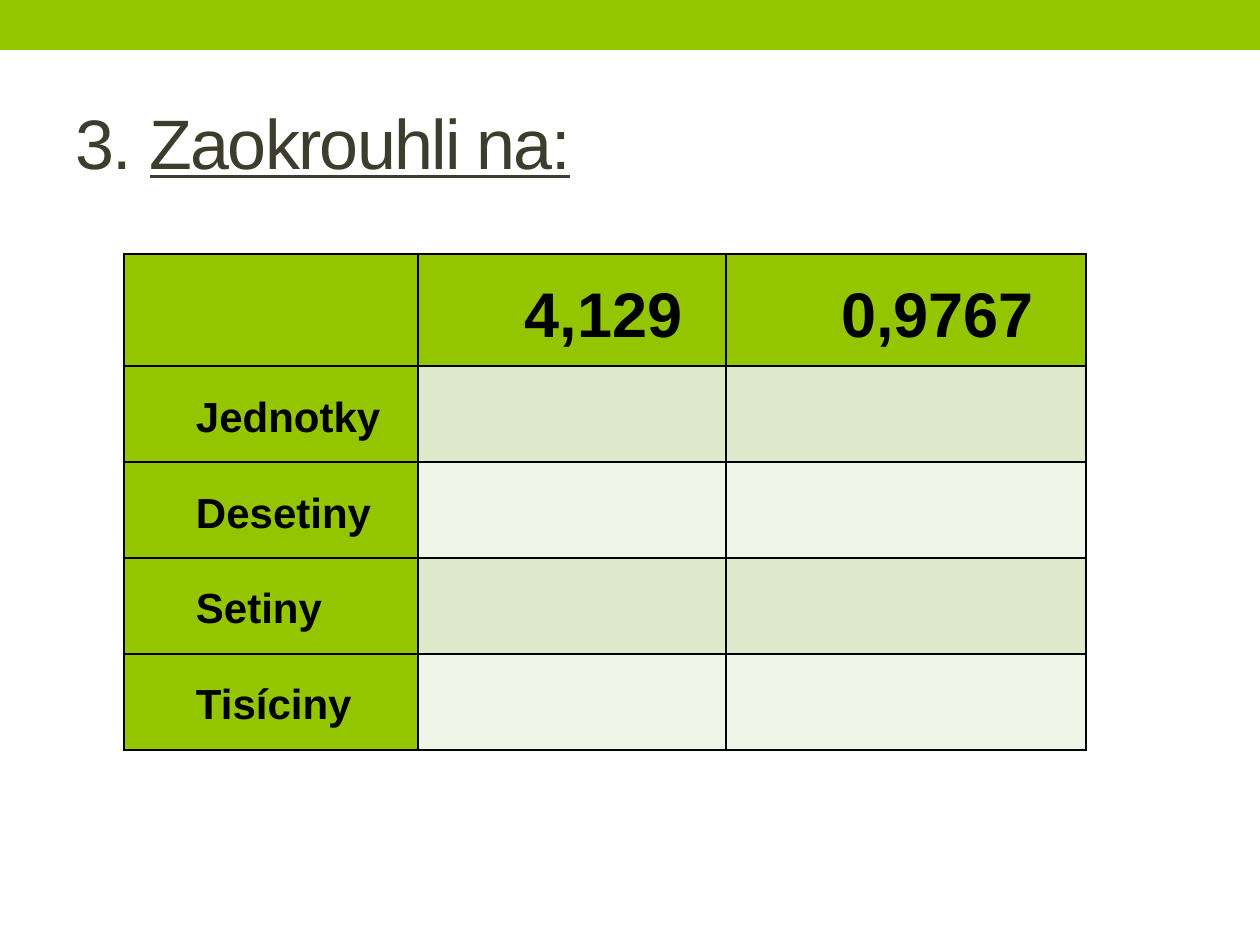
import pptx
import pptx.util
import pptx.dml.color
import pptx.enum.shapes
import pptx.enum.text
import pptx.oxml
from dataclasses import dataclass
from lxml import etree

PX = 914400 // 126  # EMU in one px
MID = pptx.enum.text.MSO_ANCHOR.MIDDLE
LEFT = pptx.enum.text.PP_ALIGN.LEFT
MAIN = "http://schemas.openxmlformats.org/drawingml/2006/main"


@dataclass
class Theme:
    font: str = "Arial"
    green: str = "94C600"
    bands: tuple = ("DCEACC", "EEF5E7")
    ink: str = "000000"
    dark: str = "3E3D2D"
    title: int = 40
    head: int = 36
    label: int = 24


def rgb(code):
    return pptx.dml.color.RGBColor.from_string(code)


def add_text(para, text, size, color, font, bold=False, line=False, track=0):
    run = para.add_run()
    run.text = text
    run.font.size = pptx.util.Pt(size)
    run.font.name = font
    run.font.bold = bold
    run.font.underline = line
    run.font.color.rgb = rgb(color)
    if track:
        run.font._element.set("spc", str(track * 100))


class Deck:
    def __init__(self, theme, wide, high):
        self.theme = theme
        self.file = pptx.Presentation()
        self.file.slide_width = wide * PX
        self.file.slide_height = high * PX
        self.slide = self.file.slides.add_slide(self.file.slide_layouts[5])

    def place(self, shape, box):
        shape.left, shape.top, shape.width, shape.height = [n * PX for n in box]

    def bar(self, box):
        shape = self.slide.shapes.add_shape(
            pptx.enum.shapes.MSO_SHAPE.RECTANGLE, *[n * PX for n in box])
        shape.shadow.inherit = False
        shape.fill.solid()
        shape.fill.fore_color.rgb = rgb(self.theme.green)
        shape.line.fill.background()

    def title(self, box, parts):
        shape = self.slide.shapes.title
        self.place(shape, box)
        shape.text_frame.vertical_anchor = MID
        para = shape.text_frame.paragraphs[0]
        para.alignment = LEFT
        for text, line in parts:
            add_text(para, text, self.theme.title, self.theme.dark,
                     self.theme.font, line=line, track=-1)

    def cell(self, cell, fill, text, size, align):
        # Borders come before the fill in the cell's properties
        props = cell._tc.get_or_add_tcPr()
        for side in "LRTB":
            props.append(pptx.oxml.parse_xml(
                f'<a:ln{side} xmlns:a="{MAIN}" w="12700"><a:solidFill>'
                f'<a:srgbClr val="{self.theme.ink}"/></a:solidFill></a:ln{side}>'))
        cell.fill.solid()
        cell.fill.fore_color.rgb = rgb(fill)
        if not text:
            return
        cell.vertical_anchor = MID
        cell.margin_left = cell.margin_right = 9 * PX
        cell.margin_top = cell.margin_bottom = 0
        para = cell.text_frame.paragraphs[0]
        para.alignment = align
        para.line_spacing = 1.15
        form = para._p.get_or_add_pPr()
        form.set("marL", str(63 * PX))
        form.set("indent", "0")
        add_text(para, text, size, self.theme.ink, self.theme.font, bold=True)

    def table(self, left, top, cols, rows, heads, labels):
        look = self.theme
        frame = self.slide.shapes.add_table(
            len(rows), len(cols), left * PX, top * PX,
            sum(cols) * PX, sum(rows) * PX)
        grid = frame.table
        grid.first_row = grid.horz_banding = False
        for col, wide in zip(grid.columns, cols):
            col.width = wide * PX
        for row, high in zip(grid.rows, rows):
            row.height = high * PX
        # Header row and label column are green, the rest is banded
        for c, head in enumerate([""] + heads):
            self.cell(grid.cell(0, c), look.green, head, look.head,
                      pptx.enum.text.PP_ALIGN.CENTER)
        for r, label in enumerate(labels, 1):
            self.cell(grid.cell(r, 0), look.green, label, look.label, LEFT)
            for c in range(1, len(cols)):
                self.cell(grid.cell(r, c), look.bands[(r - 1) % 2], "", 0, LEFT)


def main():
    deck = Deck(Theme(), 1260, 945)
    # Top band
    deck.bar((0, 0, 1260, 50))
    # Heading
    deck.title((63, 73, 1134, 136), [("3. ", False), ("Zaokrouhli na:", True)])
    # Rounding table
    deck.table(124, 254, [294, 308, 360], [112] + [96] * 4,
               ["4,129", "0,9767"],
               ["Jednotky", "Desetiny", "Setiny", "Tisíciny"])
    deck.file.save("out.pptx")


if __name__ == "__main__":
    main()
